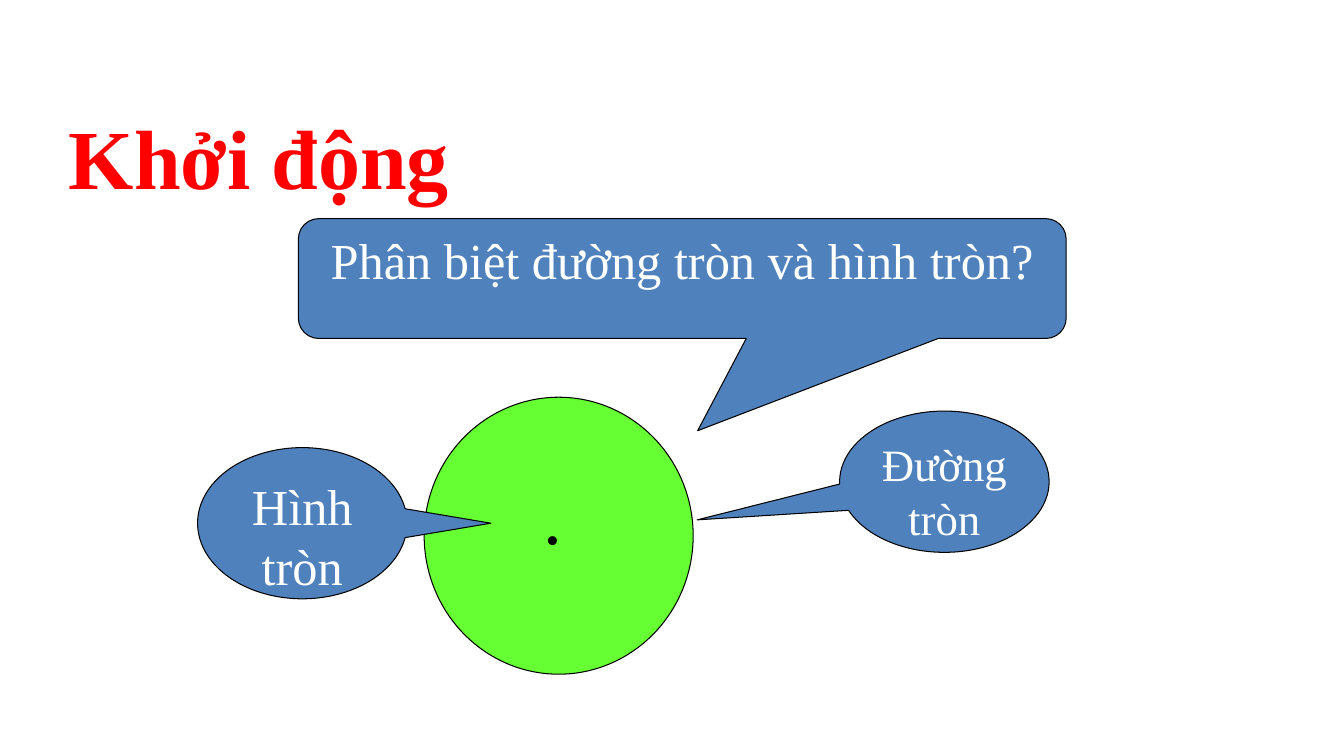
from pptx import Presentation
from pptx import util as u
from pptx.dml.color import RGBColor
from pptx.enum import shapes, text

BLUE = RGBColor(0x4F, 0x81, 0xBD)
GREEN = RGBColor(0x66, 0xFF, 0x33)
RED = RGBColor(0xFF, 0x00, 0x00)
WHITE = RGBColor(0xFF, 0xFF, 0xFF)
BLACK = RGBColor(0x00, 0x00, 0x00)
FONT = "Times New Roman"
KIND = shapes.MSO_SHAPE


def write(holder, words, size, color, align, bold=False, before=0):
    """Put one run of text at the top of a shape."""
    frame = holder.text_frame
    frame.word_wrap = True
    frame.vertical_anchor = text.MSO_ANCHOR.TOP
    line = frame.paragraphs[0]
    line.alignment = align
    line.space_before = u.Pt(before)
    run = line.add_run()
    run.text = words
    run.font.name = FONT
    run.font.size = u.Pt(size)
    run.font.bold = bold
    run.font.color.rgb = color


def outlined(slide, kind, box, fill):
    """Add a filled shape with a thin black outline."""
    figure = slide.shapes.add_shape(kind, *map(u.Cm, box))
    figure.shadow.inherit = False
    figure.fill.solid()
    figure.fill.fore_color.rgb = fill
    figure.line.color.rgb = BLACK
    figure.line.width = u.Pt(0.75)
    return figure


def callout(slide, kind, box, pointer, words, size):
    bubble = outlined(slide, kind, box, BLUE)
    for index, value in enumerate(pointer):
        bubble.adjustments[index] = value
    write(bubble, words, size, WHITE, text.PP_ALIGN.CENTER)


def heading(slide, box):
    title = slide.shapes.title
    title.left, title.top, title.width, title.height = map(u.Cm, box)
    write(title, "Khởi động", 60, RED, text.PP_ALIGN.LEFT, bold=True, before=7)
    title.text_frame.auto_size = text.MSO_AUTO_SIZE.SHAPE_TO_FIT_TEXT


def question(slide, box):
    callout(slide, KIND.ROUNDED_RECTANGULAR_CALLOUT, box, (0.02, 1.27, 0.17),
            "Phân biệt đường tròn và hình tròn?", 36)


def circle_diagram(slide, left, top):
    # Green circle
    outlined(slide, KIND.OVAL, (left + 5.71, top, 6.78, 6.98), GREEN)

    # Labels for the circumference and the disc
    labels = [
        ("Đường tròn", 32, 16.18, 0.35, 3.56, (-1.18, 0.27)),
        ("Hình tròn", 36, 0, 1.27, 3.81, (0.9, 0)),
    ]
    for words, size, dx, dy, height, pointer in labels:
        callout(slide, KIND.OVAL_CALLOUT, (left + dx, top + dy, 5.28, height),
                pointer, words, size)

    # Centre point
    centre = slide.shapes.add_textbox(
        u.Cm(left + 8.46), u.Cm(top + 1.67), u.Cm(1.27), u.Cm(2.57))
    write(centre, ".", 54, BLACK, text.PP_ALIGN.LEFT, before=7)
    centre.text_frame.auto_size = text.MSO_AUTO_SIZE.SHAPE_TO_FIT_TEXT


def main():
    deck = Presentation()
    deck.slide_width, deck.slide_height = u.Cm(33.87), u.Cm(19.05)
    slide = deck.slides.add_slide(deck.slide_layouts.get_by_name("Title Only"))
    heading(slide, (1.48, 2.54, 10.8, 2.82))
    question(slide, (7.52, 5.51, 19.35, 3.02))
    circle_diagram(slide, 4.98, 10.01)
    deck.save("out.pptx")


if __name__ == "__main__":
    main()
